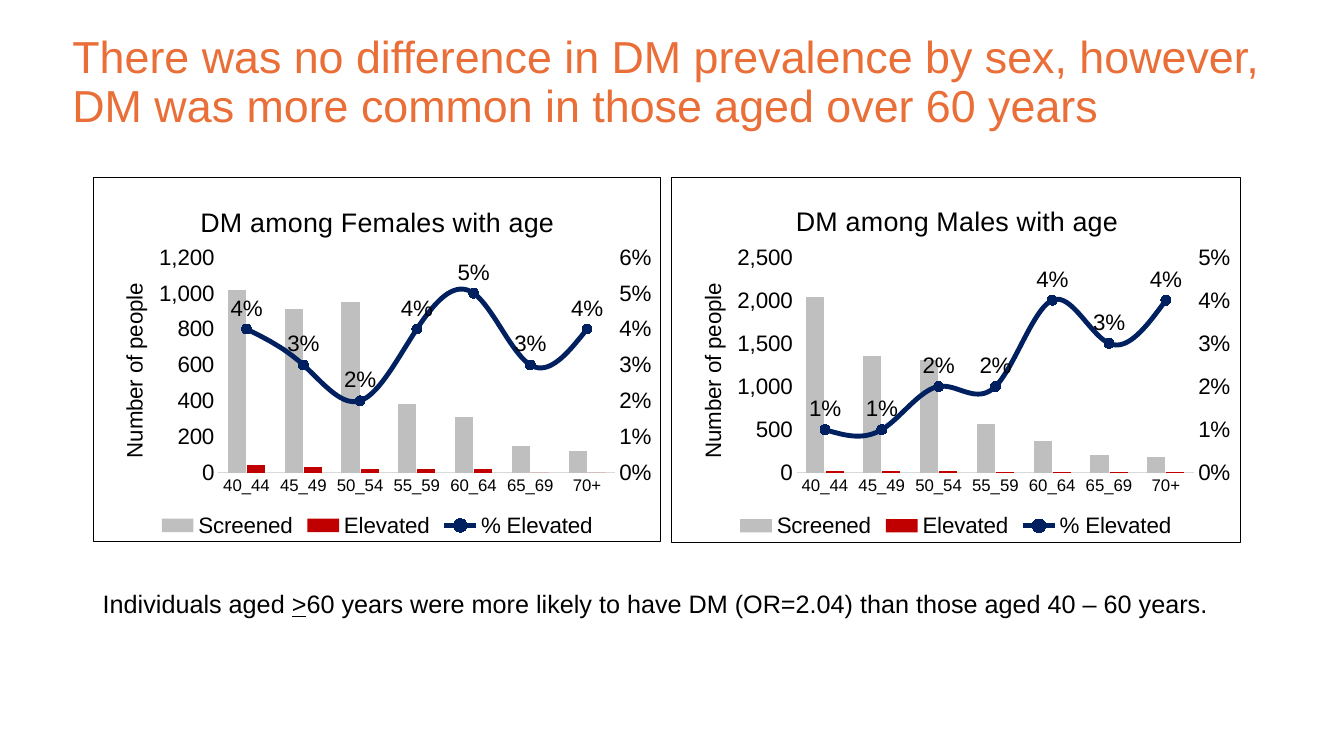
"""Build the slide on DM prevalence by sex and age."""
from pptx import Presentation
from pptx import util as u
from pptx.chart.data import CategoryChartData
from pptx.dml.color import RGBColor
from pptx.enum import chart as c, text
from pptx.oxml import parse_xml
from pptx.oxml.ns import nsdecls

ORANGE = RGBColor(0xEA, 0x6E, 0x38)
BLACK = RGBColor(0, 0, 0)
LIGHT = RGBColor(0xD9, 0xD9, 0xD9)
GREY = RGBColor(0xBF, 0xBF, 0xBF)
RED = RGBColor(0xC0, 0, 0)
NAVY = RGBColor(0, 0x20, 0x60)

FONT = "Arial"
AGES = ["40_44", "45_49", "50_54", "55_59", "60_64", "65_69", "70+"]
FEMALES = {
    "Screened": [1020, 910, 950, 380, 310, 150, 120],
    "Elevated": [40, 30, 20, 20, 20, 0, 0],
    "% Elevated": [0.04, 0.03, 0.02, 0.04, 0.05, 0.03, 0.04],
}
MALES = {
    "Screened": [2040, 1350, 1310, 560, 370, 200, 180],
    "Elevated": [20, 20, 20, 10, 10, 10, 10],
    "% Elevated": [0.01, 0.01, 0.02, 0.02, 0.04, 0.03, 0.04],
}


def style_font(font, size, color=BLACK):
    """Apply the slide's typeface with a size and colour."""
    font.name = FONT
    font.size = u.Pt(size)
    font.bold = False
    font.color.rgb = color


def manual_layout(x, y, width=None, height=None):
    """Return a layout element holding fractions of the chart area."""
    target = '<c:layoutTarget val="inner"/>' if width else ""
    extent = f'<c:w val="{width}"/><c:h val="{height}"/>' if width else ""
    return parse_xml(
        f'<c:layout {nsdecls("c")}><c:manualLayout>{target}'
        f'<c:xMode val="edge"/><c:yMode val="edge"/>'
        f'<c:x val="{x}"/><c:y val="{y}"/>{extent}</c:manualLayout></c:layout>')


def place_title(title, x, y):
    """Fix a chart or axis title at fractions of the chart area."""
    for layout in title.xpath("c:layout"):
        title.remove(layout)
    title.xpath("c:tx")[0].addnext(manual_layout(x, y))


def move_to_right_axis(space, top):
    """Turn the last column series into a line on a percentage axis."""
    bars = space.xpath(".//c:barChart")[0]
    series = bars.xpath("c:ser")[-1]
    for flag in series.xpath("c:invertIfNegative"):
        series.remove(flag)
    line = parse_xml(
        f'<c:lineChart {nsdecls("c")}><c:grouping val="standard"/>'
        '<c:varyColors val="0"/><c:marker val="1"/>'
        '<c:axId val="501"/><c:axId val="502"/></c:lineChart>')
    line.insert(2, series)
    bars.addnext(line)
    value_axis = parse_xml(
        f'<c:valAx {nsdecls("c", "a")}><c:axId val="502"/>'
        f'<c:scaling><c:orientation val="minMax"/><c:max val="{top}"/>'
        '<c:min val="0"/></c:scaling><c:delete val="0"/><c:axPos val="r"/>'
        '<c:numFmt formatCode="0%" sourceLinked="0"/>'
        '<c:majorTickMark val="none"/><c:minorTickMark val="none"/>'
        '<c:tickLblPos val="nextTo"/>'
        '<c:spPr><a:ln><a:noFill/></a:ln></c:spPr>'
        '<c:crossAx val="501"/><c:crosses val="max"/>'
        '<c:crossBetween val="between"/><c:majorUnit val="0.01"/></c:valAx>')
    hidden_axis = parse_xml(
        f'<c:catAx {nsdecls("c")}><c:axId val="501"/>'
        '<c:scaling><c:orientation val="minMax"/></c:scaling>'
        '<c:delete val="1"/><c:axPos val="b"/>'
        '<c:crossAx val="502"/><c:crosses val="autoZero"/></c:catAx>')
    left_axis = space.xpath(".//c:valAx")[0]
    left_axis.addnext(value_axis)
    value_axis.addnext(hidden_axis)


def style_axes(chart, top, step):
    """Format the age axis and the left count axis."""
    ages = chart.category_axis
    ages.format.line.color.rgb = LIGHT
    ages.format.line.width = u.Pt(0.75)
    style_font(ages.tick_labels.font, 12)
    counts = chart.value_axis
    counts.has_major_gridlines = False
    counts.minimum_scale, counts.maximum_scale, counts.major_unit = 0, top, step
    counts.format.line.fill.background()
    counts.tick_labels.number_format = "#,##0"
    counts.tick_labels.number_format_is_linked = False
    style_font(counts.tick_labels.font, 16)
    for axis in (ages, counts):
        axis.major_tick_mark = axis.minor_tick_mark = c.XL_TICK_MARK.NONE
    frame = counts.axis_title.text_frame
    frame.text = "Number of people"
    style_font(frame.paragraphs[0].runs[0].font, 16)


def style_series(chart):
    """Colour the columns and format the labelled line."""
    columns, lines = chart.plots
    columns.gap_width, columns.overlap = 109, -6
    columns.vary_by_categories = False
    for series, color in zip(columns.series, (GREY, RED)):
        series.format.fill.solid()
        series.format.fill.fore_color.rgb = color
    share = lines.series[0]
    share.smooth = True
    share.format.line.color.rgb = NAVY
    share.format.line.width = u.Pt(3.5)
    share.marker.style = c.XL_MARKER_STYLE.CIRCLE
    share.marker.size = 7
    share.marker.format.fill.solid()
    share.marker.format.fill.fore_color.rgb = NAVY
    share.marker.format.line.color.rgb = NAVY
    labels = share.data_labels
    labels.show_value = True
    labels.position = c.XL_LABEL_POSITION.ABOVE
    labels.number_format = "0%"
    labels.number_format_is_linked = False
    style_font(labels.font, 16)


def add_age_chart(page, left, title, title_x, data, top, step, share_top, border):
    """Add a framed chart of counts by age with the share elevated."""
    chart_data = CategoryChartData()
    chart_data.categories = AGES
    for name, values in data.items():
        chart_data.add_series(name, values)
    chart = page.shapes.add_chart(
        c.XL_CHART_TYPE.COLUMN_CLUSTERED, left, u.Cm(4.45),
        u.Cm(14.33), u.Cm(9.22), chart_data).chart
    style_font(chart.font, 16)
    frame = chart.chart_title.text_frame
    frame.text = title
    style_font(frame.paragraphs[0].runs[0].font, 19.2)
    chart.has_legend = True
    chart.legend.position = c.XL_LEGEND_POSITION.BOTTOM
    chart.legend.include_in_layout = False
    style_font(chart.legend.font, 16)
    style_axes(chart, top, step)

    space = chart._chartSpace
    move_to_right_axis(space, share_top)
    style_series(chart)
    heading, axis_title = space.xpath(".//c:title")
    place_title(heading, title_x, 0.06)
    place_title(axis_title, 0.04, 0.28)
    axis_title.xpath(".//a:bodyPr")[0].set("rot", "-5400000")
    plot_area = space.xpath(".//c:plotArea")[0]
    for layout in plot_area.xpath("c:layout"):
        plot_area.remove(layout)
    plot_area.insert(0, manual_layout(0.22, 0.22, 0.7, 0.59))
    space.xpath("c:chart")[0].addnext(parse_xml(
        f'<c:spPr {nsdecls("c", "a")}><a:noFill/><a:ln w="{u.Pt(border)}">'
        f'<a:solidFill><a:srgbClr val="{BLACK}"/></a:solidFill></a:ln></c:spPr>'))


def add_title(page, wording):
    """Fill and place the title placeholder."""
    box = page.shapes.title
    box.left, box.top, box.width, box.height = map(u.Cm, (1.57, 0.76, 30.63, 3.25))
    frame = box.text_frame
    frame.text = wording
    frame.auto_size = text.MSO_AUTO_SIZE.NONE
    frame.vertical_anchor = text.MSO_ANCHOR.TOP
    para = frame.paragraphs[0]
    para.alignment = text.PP_ALIGN.LEFT
    para.line_spacing = 0.9
    style_font(para.runs[0].font, 32, ORANGE)


def add_finding(page, *phrases):
    """Add the closing sentence, underlining its second phrase."""
    box = page.shapes.add_textbox(u.Cm(2.34), u.Cm(14.7), u.Cm(28.88), u.Cm(1.03))
    box.text_frame.word_wrap = True
    para = box.text_frame.paragraphs[0]
    for index, phrase in enumerate(phrases):
        span = para.add_run()
        span.text = phrase
        style_font(span.font, 18)
        span.font.underline = index == 1


def main():
    """Assemble and save the deck."""
    deck = Presentation()
    deck.slide_width, deck.slide_height = u.Cm(33.87), u.Cm(19.05)
    page = deck.slides.add_slide(deck.slide_layouts[5])
    add_title(page, "There was no difference in DM prevalence by sex, however, "
                    "DM was more common in those aged over 60 years")
    add_age_chart(page, u.Cm(2.34), "DM among Females with age", 0.18,
                  FEMALES, 1200, 200, 0.06, 0.75)
    add_age_chart(page, u.Cm(16.92), "DM among Males with age", 0.21,
                  MALES, 2500, 500, 0.05, 0.25)
    add_finding(page, "Individuals aged ", ">", "60 years were more likely to have DM "
                "(OR=2.04) than those aged 40 – 60 years.")
    deck.save("out.pptx")


if __name__ == "__main__":
    main()
